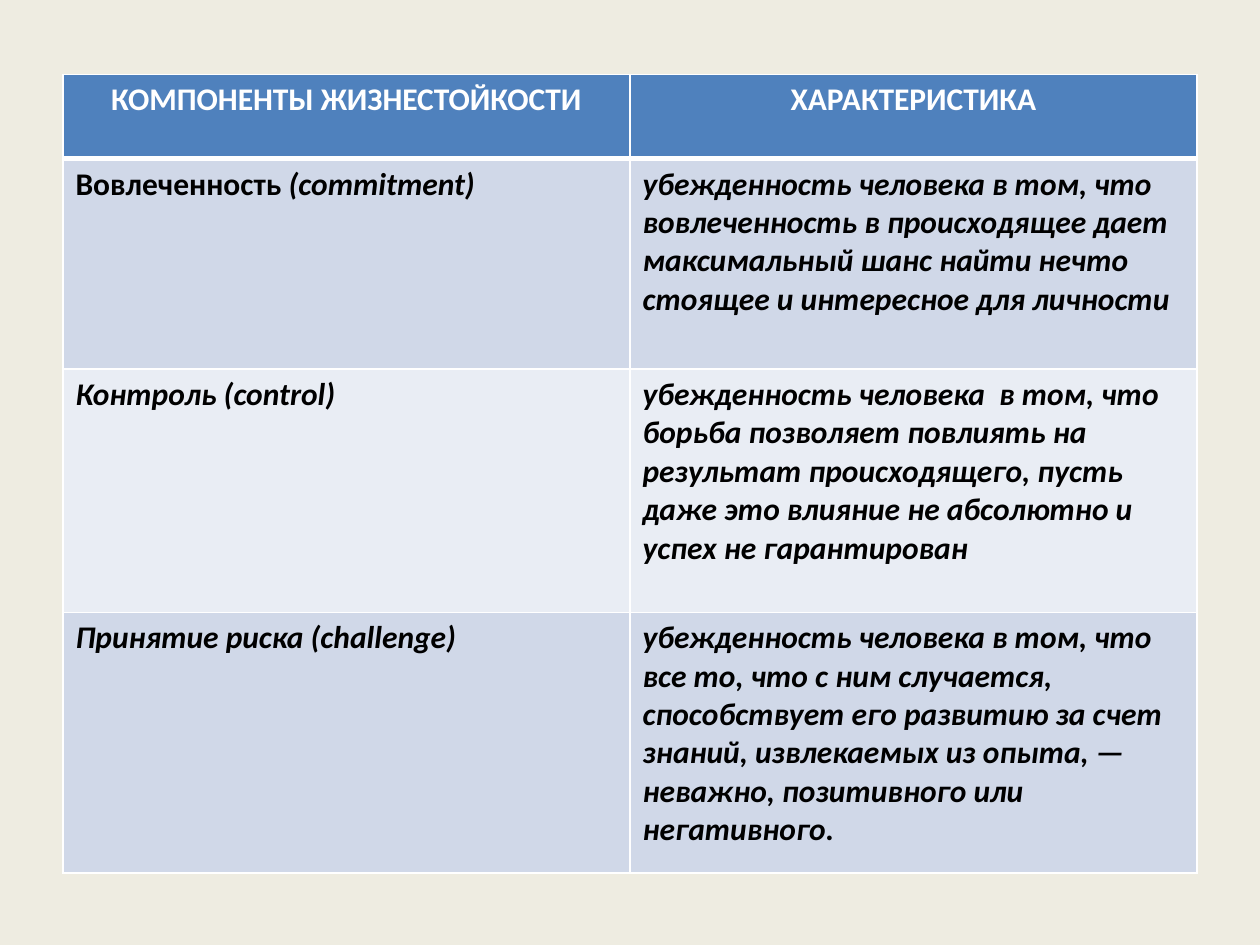
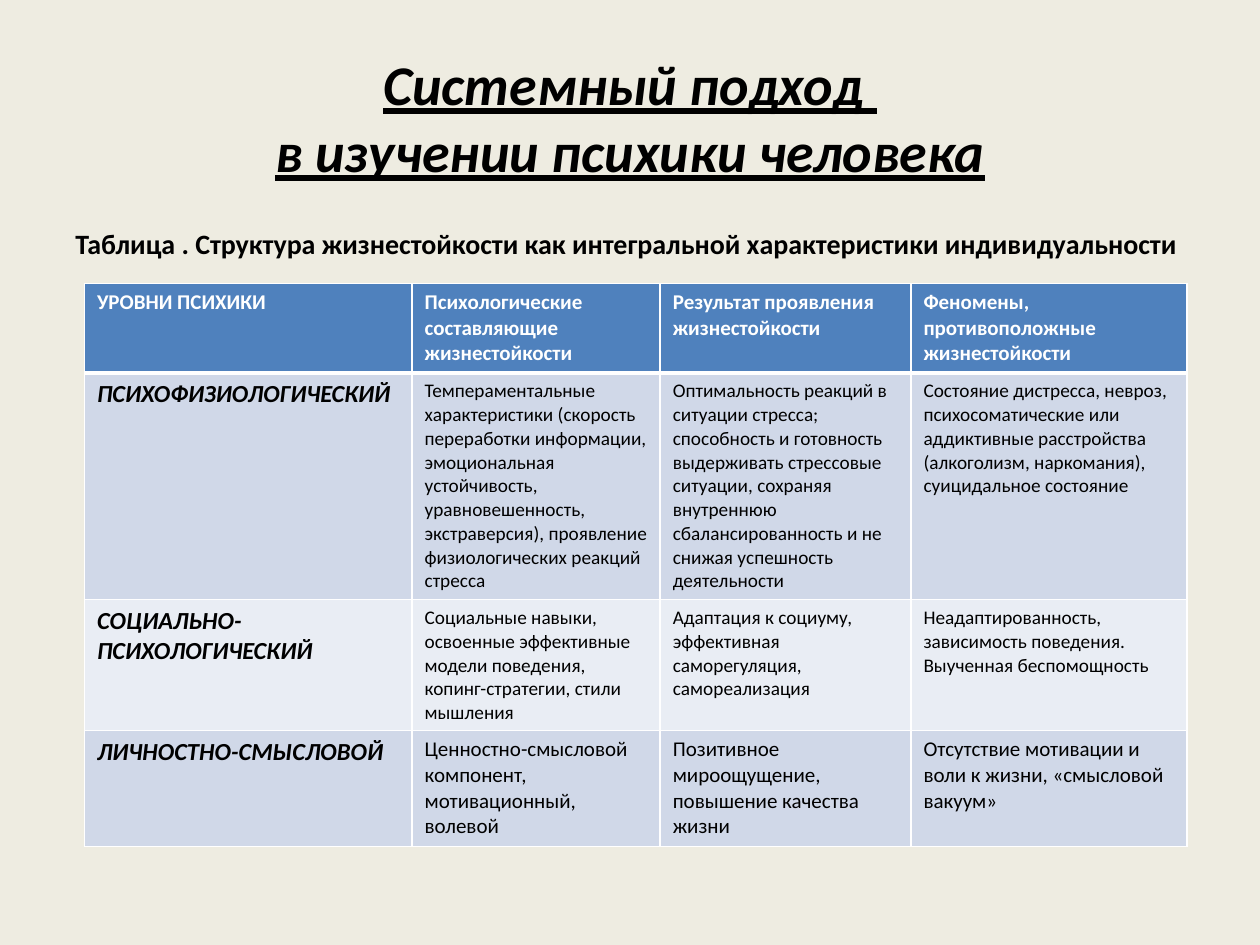
"""Builds two slides with tables on the parts of hardiness."""
from dataclasses import dataclass
from lxml import etree
from pptx import Presentation
from pptx import util as u
from pptx.dml.color import RGBColor
from pptx.enum import text
from pptx.oxml import ns

PX = 9144


@dataclass(frozen=True)
class Theme:
    face: str = "Calibri"
    back: str = "EEECE1"
    head: str = "4F81BD"
    bands: tuple = ("D0D8E8", "E9EDF4")
    white: str = "FFFFFF"
    ink: str = "000000"
    title: int = 32
    large: int = 18
    note: int = 16
    key: int = 14
    label: int = 12
    small: int = 11
    thin: int = 1
    thick: int = 3


T = Theme()

PARTS = [
    ("КОМПОНЕНТЫ ЖИЗНЕСТОЙКОСТИ", "ХАРАКТЕРИСТИКА"),
    (("Вовлеченность ", "(commitment)"),
     "убежденность человека в том, что вовлеченность в происходящее дает "
     "максимальный шанс найти нечто стоящее и интересное для личности"),
    ("Контроль (control)",
     "убежденность человека  в том, что борьба позволяет повлиять на результат "
     "происходящего, пусть даже это влияние не абсолютно и успех не гарантирован"),
    ("Принятие риска (challenge)",
     "убежденность человека в том, что все то, что с ним случается, способствует "
     "его развитию за счет знаний, извлекаемых из опыта, — неважно, позитивного "
     "или негативного."),
]

TITLE = "Системный подход \vв изучении психики человека"
NOTE = "Таблица . Структура жизнестойкости как интегральной характеристики индивидуальности"
LEVELS = [
    ("УРОВНИ ПСИХИКИ", "Психологические составляющие жизнестойкости",
     "Результат проявления жизнестойкости",
     "Феномены, противоположные жизнестойкости"),
    ("ПСИХОФИЗИОЛОГИЧЕСКИЙ",
     "Темпераментальные характеристики (скорость переработки информации, "
     "эмоциональная устойчивость, уравновешенность, экстраверсия), проявление "
     "физиологических реакций стресса",
     "Оптимальность реакций в ситуации стресса; способность и готовность "
     "выдерживать стрессовые ситуации, сохраняя внутреннюю сбалансированность "
     "и не снижая успешность деятельности",
     "Состояние дистресса, невроз, психосоматические или аддиктивные "
     "расстройства (алкоголизм, наркомания), суицидальное состояние"),
    ("СОЦИАЛЬНО-ПСИХОЛОГИЧЕСКИЙ",
     "Социальные навыки, освоенные эффективные модели поведения, "
     "копинг-стратегии, стили мышления",
     "Адаптация к социуму, эффективная саморегуляция, самореализация",
     "Неадаптированность, зависимость поведения. Выученная беспомощность"),
    ("ЛИЧНОСТНО-СМЫСЛОВОЙ",
     "Ценностно-смысловой компонент, мотивационный, волевой",
     "Позитивное мироощущение, повышение качества жизни",
     "Отсутствие мотивации и воли к жизни, «смысловой вакуум»"),
]


def style(para, size, color=T.ink, bold=True, slant=False, align=text.PP_ALIGN.LEFT):
    font = para.font
    font.name, font.size = T.face, u.Pt(size)
    font.bold, font.italic = bold, slant
    font.color.rgb = RGBColor.from_string(color)
    para.alignment = align


def edge(cell, row):
    props = cell._tc.get_or_add_tcPr()
    heavy = {0: "B", 1: "T"}.get(row)
    for side in "LRTB":
        width = T.thick if side == heavy else T.thin
        line = etree.SubElement(props, ns.qn(f"a:ln{side}"), w=str(u.Pt(width)))
        fill = etree.SubElement(line, ns.qn("a:solidFill"))
        etree.SubElement(fill, ns.qn("a:srgbClr"), val=T.white)


def paint(cell, row):
    edge(cell, row)
    color = T.bands[(row - 1) % 2] if row else T.head
    cell.fill.solid()
    cell.fill.fore_color.rgb = RGBColor.from_string(color)


def grid(slide, data, left, top, cols, rows, look):
    box = slide.shapes.add_table(len(rows), len(cols), left * PX, top * PX,
                                 sum(cols) * PX, sum(rows) * PX)
    table = box.table
    for col, width in zip(table.columns, cols):
        col.width = width * PX
    for row, high in zip(table.rows, rows):
        row.height = high * PX
    for r, line in enumerate(data):
        for c, words in enumerate(line):
            cell = table.cell(r, c)
            paint(cell, r)
            para = cell.text_frame.paragraphs[0]
            if isinstance(words, tuple):
                for slant, part in enumerate(words):
                    run = para.add_run()
                    run.text = part
                    run.font.italic = bool(slant)
            else:
                para.text = words
            style(para, **look(r, c))


def part_look(row, col):
    if row == 0:
        return dict(size=T.large, color=T.white, align=text.PP_ALIGN.CENTER)
    return dict(size=T.large, slant=True)


def level_look(row, col):
    if row == 0:
        return dict(size=T.label, color=T.white)
    if col == 0:
        return dict(size=T.key, slant=True)
    return dict(size=T.label if row == 3 else T.small, bold=False)


def place(shape, left, top, width, high):
    shape.left, shape.top = left * PX, top * PX
    shape.width, shape.height = width * PX, high * PX


def parts(deck):
    slide = deck.slides.add_slide(deck.slide_layouts[6])
    grid(slide, PARTS, 50, 59, [450, 450], [67, 167, 193, 207], part_look)


def levels(deck):
    slide = deck.slides.add_slide(deck.slide_layouts[5])
    title = slide.shapes.title
    place(title, 50, 30, 900, 125)
    title.text_frame.text = TITLE
    title.text_frame.vertical_anchor = text.MSO_ANCHOR.MIDDLE
    para = title.text_frame.paragraphs[0]
    style(para, T.title, slant=True, align=text.PP_ALIGN.CENTER)
    para.font.underline = True

    note = slide.shapes.add_textbox(50 * PX, 175 * PX, 900 * PX, 40 * PX)
    note.text_frame.word_wrap = True
    note.text_frame.text = NOTE
    style(note.text_frame.paragraphs[0], T.note)

    grid(slide, LEVELS, 67, 225, [260, 197, 199, 219], [71, 180, 104, 92], level_look)


def main():
    deck = Presentation()
    deck.slide_width, deck.slide_height = 1000 * PX, 750 * PX
    fill = deck.slide_master.background.fill
    fill.solid()
    fill.fore_color.rgb = RGBColor.from_string(T.back)
    parts(deck)
    levels(deck)
    deck.save("out.pptx")


if __name__ == "__main__":
    main()
